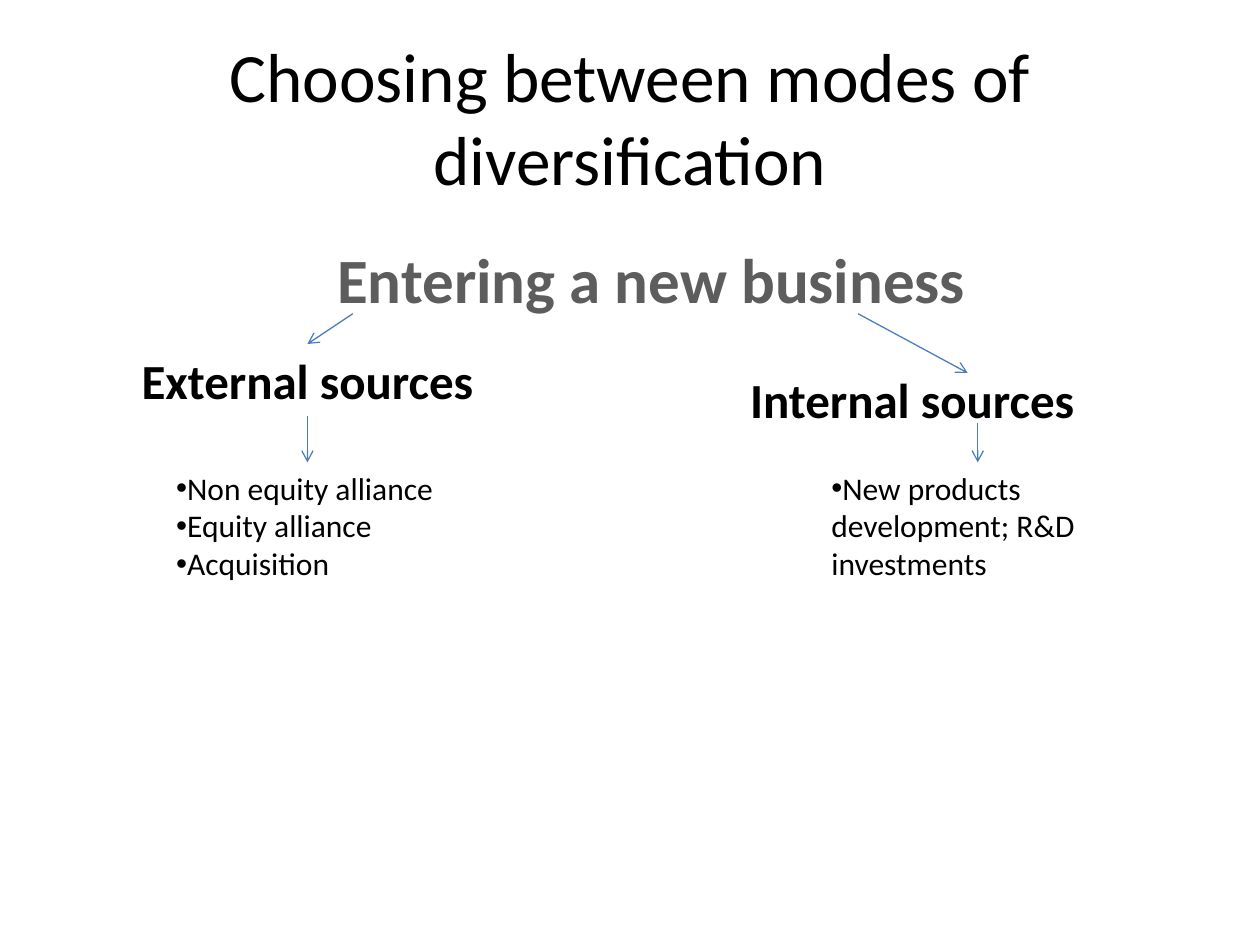
from lxml.etree import SubElement
from pptx import Presentation
from pptx.dml.color import RGBColor
from pptx.enum.shapes import MSO_CONNECTOR as Line
from pptx.enum.text import MSO_ANCHOR as Anchor, MSO_AUTO_SIZE as Fit, PP_ALIGN as Align
from pptx.oxml.ns import qn
from pptx.util import Inches, Pt

hue = RGBColor.from_string
deck = Presentation()
deck.slide_width, deck.slide_height = Inches(10), Inches(7.5)
COL = deck.slide_width / 100
ROW = deck.slide_height / 75
slide = deck.slides.add_slide(deck.slide_layouts[5])


def write(text, x, y, w, h, size=18, color="000000", bold=False,
          align=Align.CENTER, bullet=False, box=None):
    """Fill a box, new unless given, with one paragraph per line; x to h in grid cells."""
    box = box or slide.shapes.add_textbox(0, 0, 0, 0)
    box.left, box.width = int(x * COL), int(w * COL)
    box.top, box.height = int(y * ROW), int(h * ROW)
    frame = box.text_frame
    frame.word_wrap = True
    frame.text = text
    for par in frame.paragraphs:
        par.alignment = align
        if bullet:
            props = par._p.get_or_add_pPr()
            SubElement(props, qn("a:buFont"), typeface="Arial")
            SubElement(props, qn("a:buChar"), char="•")
        font = par.runs[0].font
        font.name, font.size, font.bold = "Calibri", Pt(size), bold
        font.color.rgb = hue(color)
    return box


def arrow(x1, y1, x2, y2, start=None, end=None):
    """Draw an arrow, joined to the bottom of start and the top of end if given."""
    line = slide.shapes.add_connector(
        Line.STRAIGHT, int(x1 * COL), int(y1 * ROW), int(x2 * COL), int(y2 * ROW))
    if start:
        line.begin_connect(start, 2)
    if end:
        line.end_connect(end, 0)
    line.line.color.rgb = hue("4B7EBC")
    line.line.width = Pt(0.75)
    SubElement(line.line._get_or_add_ln(), qn("a:tailEnd"), type="arrow")
    SubElement(line._element.spPr, qn("a:effectLst"))


title = write("Choosing between modes of diversification", 5, 3, 90, 12.5,
              size=39.6, box=slide.shapes.title)
title.text_frame.vertical_anchor = Anchor.MIDDLE
title.text_frame.auto_size = Fit.NONE

write("Entering a new business", 19.3, 18.6, 64.8, 7.1,
      size=36, color="5D5D5D", bold=True)

heads = [write(text, x, y, 38.6, 5.7, size=28, bold=True)
         for text, x, y in [("External sources", 5.1, 27.3),
                            ("Internal sources", 53.1, 28.8)]]
lists = [write(text, x, 36.7, 22.8, 10.1, align=Align.LEFT, bullet=True)
         for text, x in [("Non equity alliance\nEquity alliance\nAcquisition", 13),
                         ("New products development; R&D investments", 65)]]

arrow(28, 24.9, 24.4, 27.3, end=heads[0])
arrow(68.1, 24.9, 76.8, 29.6)
arrow(24.4, 33, 24.4, 36.7, start=heads[0], end=lists[0])
arrow(77.6, 33.6, 77.6, 36.7)

deck.save("out.pptx")
